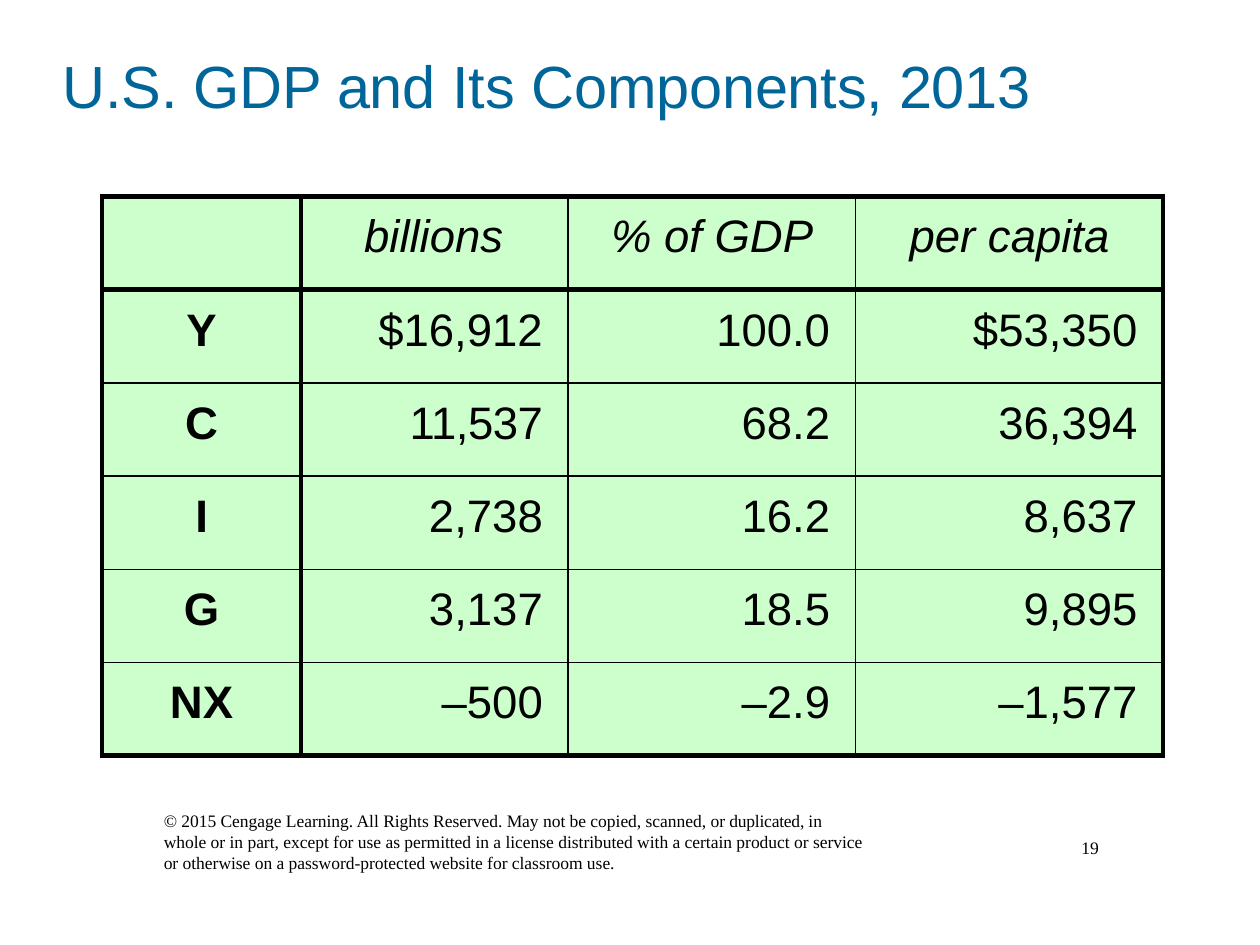
from lxml import etree
from pptx import Presentation
from pptx import util as u
from pptx.dml.color import RGBColor
from pptx.enum import text
from pptx.oxml.ns import qn

BLACK = RGBColor(0x00, 0x00, 0x00)
TITLE_BLUE = RGBColor(0x00, 0x66, 0x99)
PALE_GREEN = RGBColor(0xCC, 0xFF, 0xCC)
THICK, THIN = u.Pt(3), u.Pt(1)

TITLE_RUNS = [("U.S. GDP and", -10), (" Its ", 0), ("Components, 2013", -10)]
COPYRIGHT_RUNS = [
    ("© 2015 Cengage Learning. All Rights Reserved. May not be copied, scanned, or ", 0),
    ("duplicated, ", -10),
    ("in whole or in part, except for use as permitted in a license distributed with a "
     "certain product or service or otherwise on a password-protected website for "
     "classroom use.", 0),
]
COLUMN_WIDTHS = [1.58, 2.12, 2.28, 2.44]
HEADER_INDENTS = [0, 0.5, 0.34, 0.43]
GDP_ROWS = [
    ["", "billions", "% of GDP", "per capita"],
    ["Y", "$16,912", "100.0", "$53,350"],
    ["C", "11,537", "68.2", "36,394"],
    ["I", "2,738", "16.2", "8,637"],
    ["G", "3,137", "18.5", "9,895"],
    ["NX", "–500", "–2.9", "–1,577"],
]


def add_run(paragraph, content, size, font="Arial", color=BLACK, spacing=0):
    """Append a formatted run and return it."""
    run = paragraph.add_run()
    run.text = content
    run.font.size = u.Pt(size)
    run.font.name = font
    run.font.color.rgb = color
    if spacing:
        run.font._element.set("spc", str(spacing))
    return run


def add_text(slide, box, runs, size, font, color, alignment):
    """Place one paragraph in a middle-anchored box and return the paragraph."""
    shape = slide.shapes.add_textbox(*(u.Inches(length) for length in box))
    frame = shape.text_frame
    frame.word_wrap = True
    frame.vertical_anchor = text.MSO_ANCHOR.MIDDLE
    frame.margin_left = frame.margin_top = frame.margin_right = frame.margin_bottom = 0
    paragraph = frame.paragraphs[0]
    paragraph.alignment = alignment
    for content, spacing in runs:
        add_run(paragraph, content, size, font, color, spacing)
    return paragraph


def set_borders(cell, widths):
    """Draw black left, right, top and bottom cell borders of the given widths."""
    properties = cell._tc.get_or_add_tcPr()
    for index, (side, width) in enumerate(zip(("lnL", "lnR", "lnT", "lnB"), widths)):
        line = etree.Element(qn(f"a:{side}"), w=str(width))
        fill = etree.SubElement(line, qn("a:solidFill"))
        etree.SubElement(fill, qn("a:srgbClr"), val=str(BLACK))
        properties.insert(index, line)


def fill_cell(cell, content, row, column):
    """Write and style one cell according to its place in the table."""
    cell.fill.solid()
    cell.fill.fore_color.rgb = PALE_GREEN
    cell.margin_left = cell.margin_right = cell.margin_bottom = 0
    cell.margin_top = u.Inches(0.12)
    last_row, last_column = len(GDP_ROWS) - 1, len(COLUMN_WIDTHS) - 1
    set_borders(cell, [
        THICK if column <= 1 else THIN,
        THICK if column in (0, last_column) else THIN,
        THICK if row <= 1 else THIN,
        THICK if row in (0, last_row) else THIN,
    ])
    paragraph = cell.text_frame.paragraphs[0]
    if row == 0:
        cell.margin_left = u.Inches(HEADER_INDENTS[column])
    elif column == 0:
        paragraph.alignment = text.PP_ALIGN.CENTER
    else:
        paragraph.alignment = text.PP_ALIGN.RIGHT
        cell.margin_right = u.Inches(0.2)
    if content:
        run = add_run(paragraph, content, 26, spacing=-30 if content == "11,537" else 0)
        run.font.italic = row == 0
        run.font.bold = row > 0 and column == 0


def add_gdp_table(slide, left, top, width, height):
    """Place the table of GDP components."""
    frame = slide.shapes.add_table(
        len(GDP_ROWS), len(COLUMN_WIDTHS),
        u.Inches(left), u.Inches(top), u.Inches(width), u.Inches(height))
    table = frame.table
    table.first_row = table.horz_banding = False
    for column, column_width in zip(table.columns, COLUMN_WIDTHS):
        column.width = u.Inches(column_width)
    for row, values in enumerate(GDP_ROWS):
        for column, content in enumerate(values):
            fill_cell(table.cell(row, column), content, row, column)


def add_footer(slide, left, top, width, height):
    """Place the copyright line at the left and the page number at the right."""
    add_text(slide, (left, top, 5.55, height), COPYRIGHT_RUNS, 10,
             "Times New Roman", BLACK, text.PP_ALIGN.LEFT)
    number_width = 0.43
    number = add_text(slide, (left + width - number_width, top, number_width, height),
                      [("19", 0)], 10, "Times New Roman", BLACK, text.PP_ALIGN.RIGHT)
    number.line_spacing = u.Pt(19.6)


def main():
    """Build and save the slide."""
    presentation = Presentation()
    presentation.slide_width = u.Inches(10)
    presentation.slide_height = u.Inches(7.5)
    slide = presentation.slides.add_slide(presentation.slide_layouts[6])
    add_text(slide, (0.46, 0.38, 7.76, 0.59), TITLE_RUNS, 34, "Arial", TITLE_BLUE,
             text.PP_ALIGN.CENTER)
    add_footer(slide, 1.3, 6.52, 7.42, 0.31)
    add_gdp_table(slide, 0.81, 1.56, sum(COLUMN_WIDTHS), 4.44)
    presentation.save("out.pptx")


if __name__ == "__main__":
    main()
